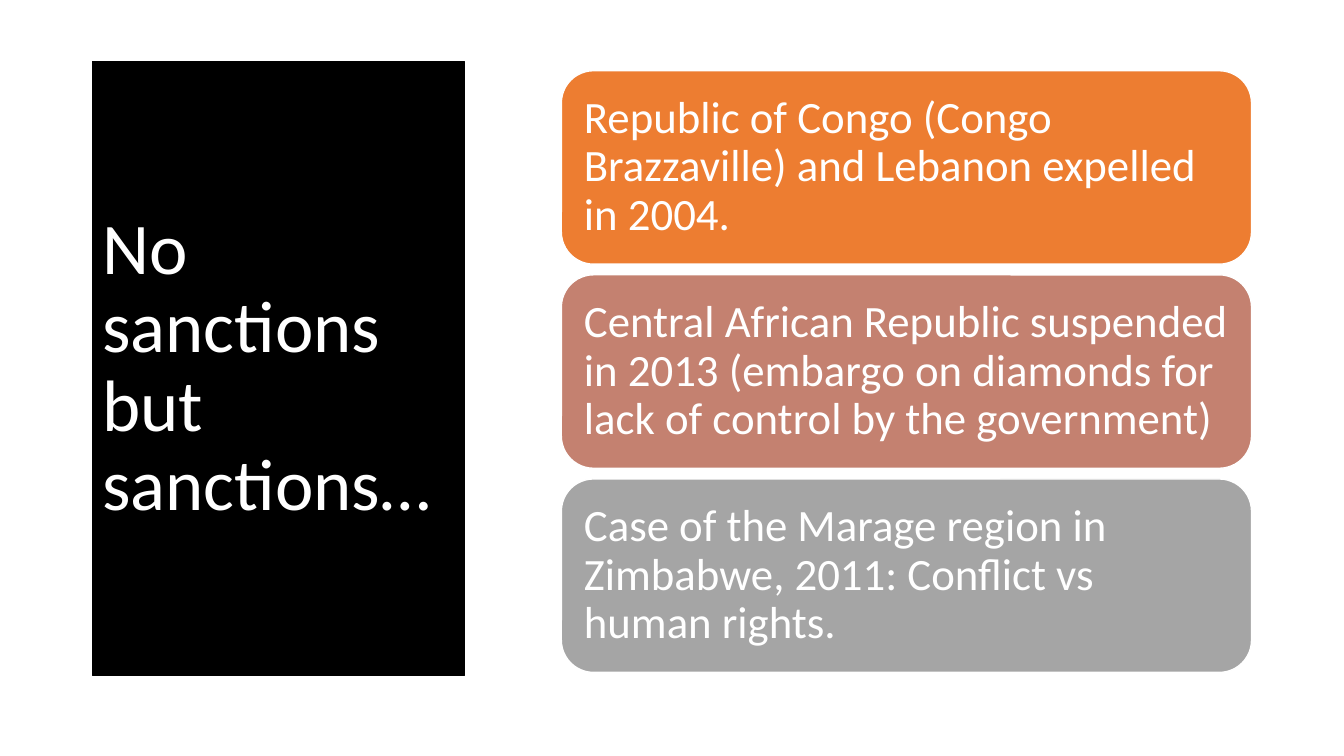
import pptx
import pptx.util
import pptx.dml.color
import pptx.enum.shapes
import pptx.enum.text
from dataclasses import dataclass

Pt = pptx.util.Pt
RGB = pptx.dml.color.RGBColor.from_string


@dataclass(frozen=True)
class Theme:
    font: str = "Calibri"
    white: str = "FFFFFF"
    black: str = "000000"
    cards: tuple = ("ED7D31", "C48170", "A5A5A5")
    title_size: int = 52
    card_size: int = 32


theme = Theme()


def paint(sp, fill, line):
    sp.fill.solid()
    sp.fill.fore_color.rgb = RGB(fill)
    sp.line.color.rgb = RGB(line)
    sp.line.width = Pt(1)


def write(sp, text, size):
    """Set one left-aligned, vertically centred white paragraph."""
    tf = sp.text_frame
    tf.word_wrap = True
    tf.auto_size = pptx.enum.text.MSO_AUTO_SIZE.NONE
    tf.vertical_anchor = pptx.enum.text.MSO_ANCHOR.MIDDLE
    p = tf.paragraphs[0]
    p.alignment = pptx.enum.text.PP_ALIGN.LEFT
    p.line_spacing = 0.9
    r = p.add_run()
    r.text = text
    r.font.name = theme.font
    r.font.size = Pt(size)
    r.font.color.rgb = RGB(theme.white)


prs = pptx.Presentation()
prs.slide_width, prs.slide_height = Pt(960), Pt(540)
s = prs.slides.add_slide(prs.slide_layouts[5])

# Title panel
title = s.shapes.title
title.left, title.top, title.width, title.height = Pt(66), Pt(44), Pt(266), Pt(438.5)
paint(title, theme.black, theme.black)
write(title, "No sanctions but sanctions…", theme.title_size)

# Stack of cases
cases = (
    "Republic of Congo (Congo Brazzaville) and Lebanon expelled in 2004.",
    "Central African Republic suspended in 2013 (embargo on diamonds for lack of control by the government)",
    "Case of the Marage region in Zimbabwe, 2011: Conflict vs human rights.",
)
left, top, width, height, gap = 401, 50.5, 493, 138.2, 7.6
for i, (case, color) in enumerate(zip(cases, theme.cards)):
    card = s.shapes.add_shape(
        pptx.enum.shapes.MSO_SHAPE.ROUNDED_RECTANGLE,
        Pt(left), Pt(top + i * (height + gap)), Pt(width), Pt(height))
    card.shadow.inherit = False
    paint(card, color, theme.white)
    # The rounded corners already add about 6.75 pt to each inset
    tf = card.text_frame
    tf.margin_left = tf.margin_right = Pt(9.4)
    tf.margin_top = tf.margin_bottom = Pt(9.4)
    write(card, case, theme.card_size)

prs.save("out.pptx")
